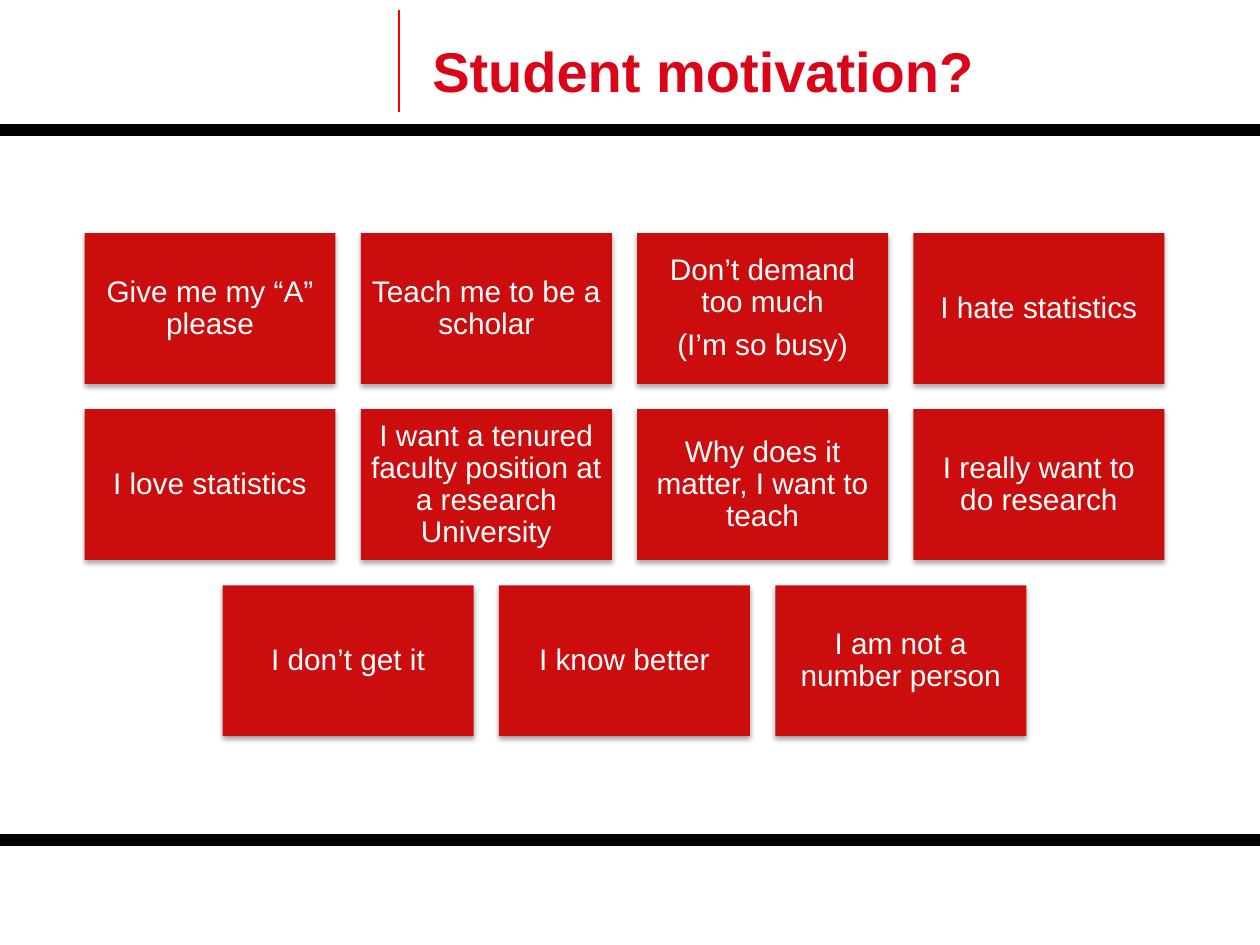
from dataclasses import dataclass

from lxml.etree import SubElement
from pptx import Presentation
from pptx.dml.color import RGBColor
from pptx.enum.shapes import MSO_CONNECTOR as Connector, MSO_SHAPE as Preset
from pptx.enum.text import MSO_ANCHOR as Anchor, MSO_AUTO_SIZE as AutoSize, PP_ALIGN as Align
from pptx.oxml.ns import qn
from pptx.shapes.base import BaseShape
from pptx.slide import Slide
from pptx.text.text import Font
from pptx.util import Cm, Pt


@dataclass(frozen=True)
class Theme:
    """Colours and type sizes of the slide."""
    font: str = "Arial"
    title: RGBColor = RGBColor(0xDA, 0x05, 0x19)
    tile: RGBColor = RGBColor(0xCB, 0x0D, 0x0E)
    tile_text: RGBColor = RGBColor(0xFF, 0xFF, 0xFF)
    accent: RGBColor = RGBColor(0xFF, 0x00, 0x00)
    band: RGBColor = RGBColor(0x00, 0x00, 0x00)
    title_size: float = 32
    tile_size: float = 17


@dataclass(frozen=True)
class Rule:
    """A straight line, with its ends in centimetres and its width in points."""
    x1: float
    y1: float
    x2: float
    y2: float
    width: float
    color: RGBColor


@dataclass(frozen=True)
class TileGrid:
    """Centred rows of equal tiles, in centimetres."""
    center: float = 12.59
    top: float = 4.7
    width: float = 5.06
    height: float = 3.04
    gap: float = 0.51
    inset: float = 0.18


THEME = Theme()
GRID = TileGrid()
RULES = [
    Rule(8.05, 2.26, 8.05, 0.2, 1.25, THEME.accent),
    Rule(-0.05, 2.62, 25.43, 2.62, 7, THEME.band),
    Rule(0, 16.94, 25.48, 16.94, 7, THEME.band),
]
MOTIVATIONS = [
    ["Give me my “A” please", "Teach me to be a scholar",
     "Don’t demand too much\n(I’m so busy)", "I hate statistics"],
    ["I love statistics", "I want a tenured faculty position at a research University",
     "Why does it matter, I want to teach", "I really want to do research"],
    ["I don’t get it", "I know better", "I am not a number person"],
]


def style_font(font: Font, size: float, color: RGBColor, bold: bool = False) -> None:
    """Apply the theme's typeface with a size, colour and weight."""
    font.name = THEME.font
    font.size = Pt(size)
    font.bold = bold
    font.color.rgb = color


def add_rule(slide: Slide, rule: Rule) -> None:
    """Draw a line without a shadow."""
    stroke = slide.shapes.add_connector(
        Connector.STRAIGHT, Cm(rule.x1), Cm(rule.y1), Cm(rule.x2), Cm(rule.y2))
    stroke.line.width = Pt(rule.width)
    stroke.line.color.rgb = rule.color
    SubElement(stroke._element.spPr, qn("a:effectLst"))


def cast_shadow(tile: BaseShape) -> None:
    """Give a tile a soft shadow just below it."""
    tile.shadow.inherit = False
    effects = tile._element.spPr.find(qn("a:effectLst"))
    shadow = SubElement(effects, qn("a:outerShdw"), blurRad=str(Pt(3.1)),
                        dist=str(Pt(1.8)), dir="5400000", rotWithShape="0")
    shade = SubElement(shadow, qn("a:srgbClr"), val="000000")
    SubElement(shade, qn("a:alpha"), val="35000")


def add_tile(slide: Slide, left: float, top: float, motivation: str) -> None:
    """Draw one tile with its centred statement."""
    tile = slide.shapes.add_shape(
        Preset.RECTANGLE, Cm(left), Cm(top), Cm(GRID.width), Cm(GRID.height))
    tile.fill.solid()
    tile.fill.fore_color.rgb = THEME.tile
    tile.line.fill.background()
    cast_shadow(tile)
    frame = tile.text_frame
    frame.word_wrap = True
    frame.vertical_anchor = Anchor.MIDDLE
    frame.margin_left = frame.margin_right = Cm(GRID.inset)
    frame.margin_top = frame.margin_bottom = Cm(GRID.inset)
    frame.text = motivation
    for index, paragraph in enumerate(frame.paragraphs):
        paragraph.alignment = Align.CENTER
        paragraph.line_spacing = 0.9
        paragraph.space_before = Pt(6 if index else 0)
        for run in paragraph.runs:
            style_font(run.font, THEME.tile_size, THEME.tile_text)


def add_tiles(slide: Slide) -> None:
    """Lay the motivations out in centred rows."""
    for row, motivations in enumerate(MOTIVATIONS):
        count = len(motivations)
        left = GRID.center - (count * GRID.width + (count - 1) * GRID.gap) / 2
        top = GRID.top + row * (GRID.height + GRID.gap)
        for column, motivation in enumerate(motivations):
            add_tile(slide, left + column * (GRID.width + GRID.gap), top, motivation)


def set_title(slide: Slide, heading: str) -> None:
    """Place and format the title placeholder."""
    title = slide.shapes.title
    title.left, title.top, title.width, title.height = Cm(8.46), Cm(0.66), Cm(15.77), Cm(1.55)
    frame = title.text_frame
    frame.text = heading
    frame.word_wrap = True
    frame.auto_size = AutoSize.NONE
    frame.vertical_anchor = Anchor.BOTTOM
    paragraph = frame.paragraphs[0]
    paragraph.alignment = Align.LEFT
    style_font(paragraph.runs[0].font, THEME.title_size, THEME.title, bold=True)


def main() -> None:
    """Build and save the slide."""
    deck = Presentation()
    deck.slide_width, deck.slide_height = Cm(25.4), Cm(19.05)
    slide = deck.slides.add_slide(deck.slide_layouts.get_by_name("Title Only"))
    for rule in RULES:
        add_rule(slide, rule)
    set_title(slide, "Student motivation?")
    add_tiles(slide)
    deck.save("out.pptx")


if __name__ == "__main__":
    main()
